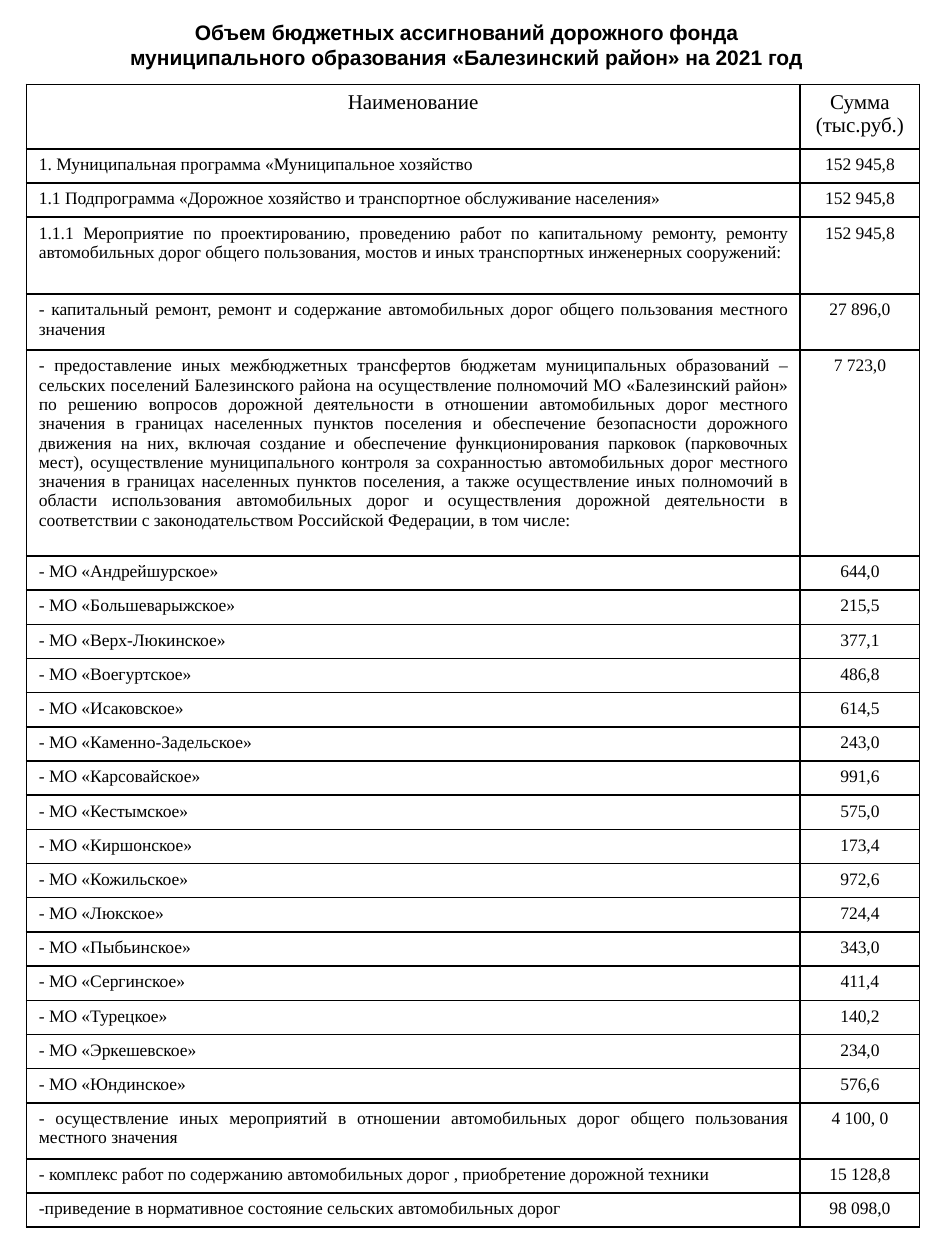
"""Build a one-slide table of road fund allocations for 2021."""
from lxml import etree
from pptx import Presentation
from pptx import util as u
from pptx.dml.color import RGBColor
from pptx.enum import text
from pptx.oxml.ns import qn

TITLE = [
    "Объем бюджетных ассигнований дорожного фонда",
    "муниципального образования «Балезинский район» на 2021 год",
]
HEADER = ("Наименование", "Сумма (тыс.руб.)")
PROGRAMME = [
    ("1. Муниципальная программа «Муниципальное хозяйство", "152 945,8"),
    ("1.1 Подпрограмма «Дорожное хозяйство и транспортное обслуживание населения»", "152 945,8"),
    ("1.1.1 Мероприятие по проектированию, проведению работ по капитальному ремонту, "
     "ремонту автомобильных дорог общего пользования, мостов и иных транспортных "
     "инженерных сооружений:", "152 945,8"),
    ("- капитальный ремонт, ремонт и содержание автомобильных дорог общего пользования "
     "местного значения", "27 896,0"),
    ("- предоставление иных межбюджетных трансфертов бюджетам муниципальных образований – "
     "сельских поселений Балезинского района на осуществление полномочий МО «Балезинский "
     "район» по решению вопросов дорожной деятельности в отношении автомобильных дорог "
     "местного значения в границах населенных пунктов поселения и обеспечение безопасности "
     "дорожного движения на них, включая создание и обеспечение функционирования парковок "
     "(парковочных мест), осуществление муниципального контроля за сохранностью "
     "автомобильных дорог местного значения в границах населенных пунктов поселения, а "
     "также осуществление иных полномочий в области использования автомобильных дорог и "
     "осуществления дорожной деятельности в соответствии с законодательством Российской "
     "Федерации, в том числе:", "7 723,0"),
]
SETTLEMENTS = [
    ("Андрейшурское", "644,0"), ("Большеварыжское", "215,5"),
    ("Верх-Люкинское", "377,1"), ("Воегуртское", "486,8"),
    ("Исаковское", "614,5"), ("Каменно-Задельское", "243,0"),
    ("Карсовайское", "991,6"), ("Кестымское", "575,0"),
    ("Киршонское", "173,4"), ("Кожильское", "972,6"),
    ("Люкское", "724,4"), ("Пыбьинское", "343,0"),
    ("Сергинское", "411,4"), ("Турецкое", "140,2"),
    ("Эркешевское", "234,0"), ("Юндинское", "576,6"),
]
OTHER = [
    ("- осуществление иных мероприятий в отношении автомобильных дорог общего "
     "пользования местного значения", "4 100, 0"),
    ("- комплекс работ по содержанию автомобильных дорог , приобретение дорожной техники",
     "15 128,8"),
    ("-приведение в нормативное состояние сельских автомобильных дорог", "98 098,0"),
]
ROWS = [HEADER, *PROGRAMME, *((f"- МО «{name}»", v) for name, v in SETTLEMENTS), *OTHER]

ROW_H = 0.69
TALL_ROWS = {0: 1.3, 3: 1.55, 4: 1.13, 5: 4.15, len(ROWS) - 3: 1.13}
COL_W = (15.6, 2.41)
ALIGN = text.PP_ALIGN
THEME = {
    "ink": "000000",
    "border": u.Pt(1),
    "title": {"name": "Arial", "size": u.Pt(12), "bold": True},
    "header": {"name": "Times New Roman", "size": u.Pt(12), "bold": False},
    "body": {"name": "Times New Roman", "size": u.Pt(10), "bold": False},
}


def write(p, content, style, align):
    p.alignment = align
    r = p.add_run()
    r.text = content
    for key, value in THEME[style].items():
        setattr(r.font, key, value)
    r.font.color.rgb = RGBColor.from_string(THEME["ink"])


def add_borders(cell):
    pr = cell._tc.get_or_add_tcPr()
    for i, side in enumerate(("a:lnL", "a:lnR", "a:lnT", "a:lnB")):
        ln = etree.Element(qn(side), w=str(THEME["border"]))
        fill = etree.SubElement(ln, qn("a:solidFill"))
        etree.SubElement(fill, qn("a:srgbClr"), val=THEME["ink"])
        pr.insert(i, ln)


def add_title(s):
    sp = s.shapes.add_textbox(u.Cm(0.71), u.Cm(0.23), u.Cm(17.4), u.Cm(1.34))
    tf = sp.text_frame
    tf.word_wrap = True
    tf.vertical_anchor = text.MSO_ANCHOR.MIDDLE
    for i, line in enumerate(TITLE):
        p = tf.add_paragraph() if i else tf.paragraphs[0]
        write(p, line, "title", ALIGN.CENTER)


def add_budget(s):
    heights = [TALL_ROWS.get(i, ROW_H) for i in range(len(ROWS))]
    table = s.shapes.add_table(len(ROWS), len(COL_W), u.Cm(0.53), u.Cm(1.7),
                               u.Cm(sum(COL_W)), u.Cm(sum(heights))).table
    table.first_row = table.horz_banding = False
    for col, width in zip(table.columns, COL_W):
        col.width = u.Cm(width)
    for i, (values, height) in enumerate(zip(ROWS, heights)):
        table.rows[i].height = u.Cm(height)
        name_align = ALIGN.LEFT if i >= len(ROWS) - 2 else ALIGN.JUSTIFY
        aligns = (name_align if i else ALIGN.CENTER, ALIGN.CENTER)
        for j, (value, align) in enumerate(zip(values, aligns)):
            cell = table.cell(i, j)
            cell.fill.background()
            write(cell.text_frame.paragraphs[0], value, "body" if i else "header", align)
            add_borders(cell)


def main():
    prs = Presentation()
    prs.slide_width, prs.slide_height = u.Cm(19.05), u.Cm(25.4)
    s = prs.slides.add_slide(prs.slide_layouts[6])
    add_title(s)
    add_budget(s)
    prs.save("out.pptx")


if __name__ == "__main__":
    main()
